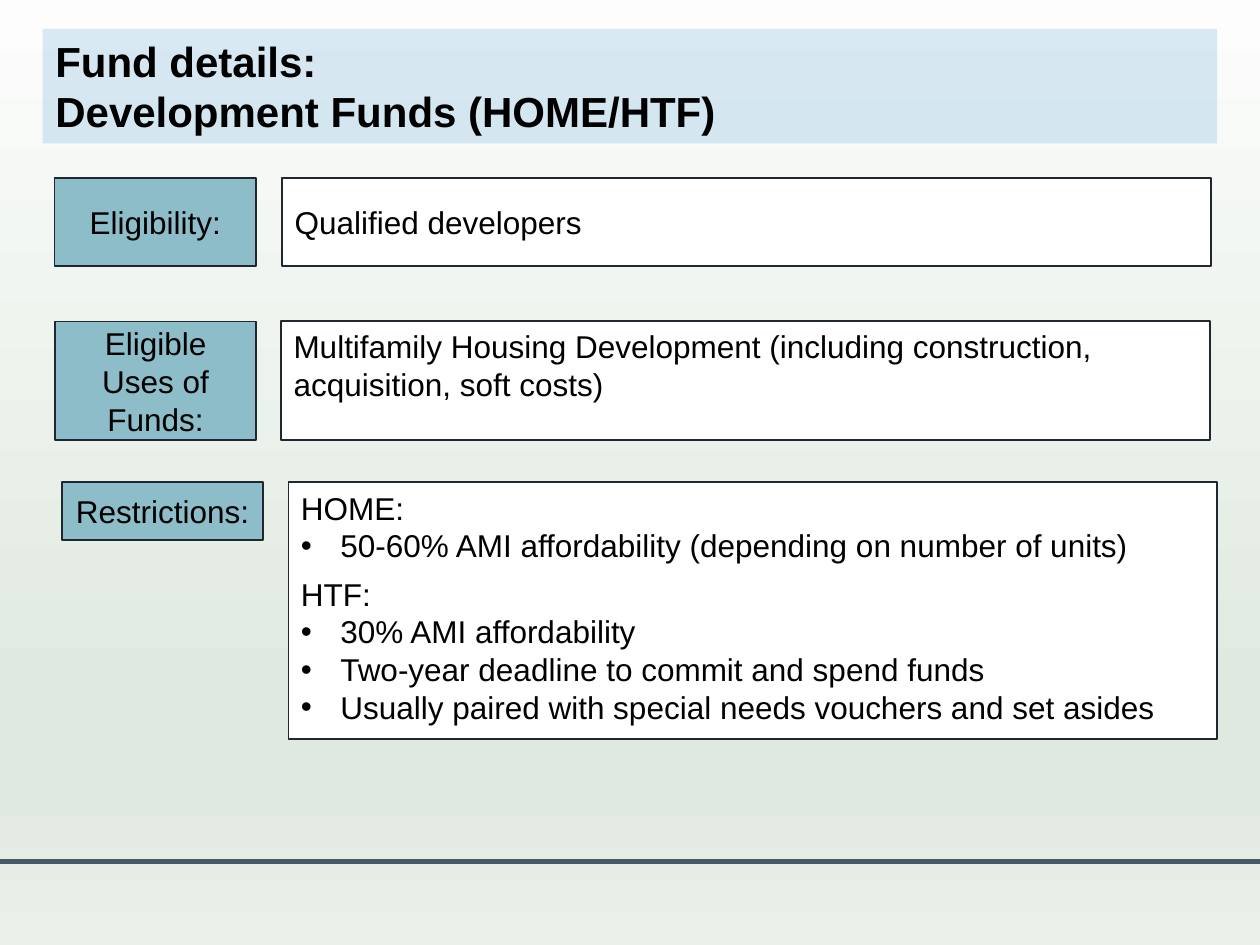
from dataclasses import dataclass

from lxml.etree import SubElement
from pptx import Presentation
from pptx.dml.color import RGBColor
from pptx.enum.shapes import MSO_CONNECTOR, MSO_SHAPE
from pptx.enum.text import MSO_ANCHOR, MSO_AUTO_SIZE, PP_ALIGN
from pptx.oxml.ns import qn
from pptx.slide import Slide
from pptx.text.text import TextFrame
from pptx.util import Pt


@dataclass(frozen=True)
class Theme:
    font: str = "Arial"
    title_size: float = 24
    body_size: float = 18
    text: str = "000000"
    title_fill: str = "0070C0"
    title_alpha: int = 14
    label_fill: str = "8CBDC8"
    detail_fill: str = "FFFFFF"
    border: str = "20272E"
    rule: str = "495869"
    backdrop: tuple = ((0, "FCFDFC"), (74, "E0E9E0"), (83, "E0E9E0"), (100, "EAF1EB"))


@dataclass(frozen=True)
class Para:
    text: str
    bullet: bool = False
    after: float = 0


@dataclass(frozen=True)
class Box:
    left: float
    top: float
    width: float
    height: float


@dataclass(frozen=True)
class FundRow:
    label: str
    label_box: Box
    details: tuple[Para, ...]
    detail_box: Box
    anchor: MSO_ANCHOR = MSO_ANCHOR.TOP


THEME = Theme()
LABEL_W, DETAIL_W = 115, 530.6

TITLE = (Para("Fund details:"), Para("Development Funds (HOME/HTF)"))
ROWS = (
    FundRow(
        "Eligibility:", Box(31.2, 101.6, LABEL_W, 50.4),
        (Para("Qualified developers"),), Box(161.3, 101.6, DETAIL_W, 50.4),
        MSO_ANCHOR.MIDDLE,
    ),
    FundRow(
        "Eligible Uses of Funds:", Box(31.4, 183.8, LABEL_W, 67.7),
        (Para("Multifamily Housing Development (including construction, "
              "acquisition, soft costs)"),),
        Box(160.7, 183.4, DETAIL_W, 68),
    ),
    FundRow(
        "Restrictions:", Box(35.4, 275.4, LABEL_W, 33.2),
        (
            Para("HOME:"),
            Para("50-60% AMI affordability (depending on number of units)", True, 6),
            Para("HTF:"),
            Para("30% AMI affordability", True),
            Para("Two-year deadline to commit and spend funds", True),
            Para("Usually paired with special needs vouchers and set asides", True),
        ),
        Box(164.9, 275.6, DETAIL_W, 146.8),
    ),
)


def rgb(color: str) -> RGBColor:
    return RGBColor.from_string(color)


def write(tf: TextFrame, paras: tuple[Para, ...], size: float, align: PP_ALIGN,
          anchor: MSO_ANCHOR, bold: bool = False) -> None:
    tf.word_wrap = True
    tf.auto_size = MSO_AUTO_SIZE.NONE
    tf.vertical_anchor = anchor
    for i, para in enumerate(paras):
        p = tf.paragraphs[0] if i == 0 else tf.add_paragraph()
        p.alignment = align
        p.space_before = Pt(0)
        p.space_after = Pt(para.after)
        if para.bullet:
            pPr = p._p.get_or_add_pPr()
            pPr.set("marL", str(Pt(22.5)))
            pPr.set("indent", str(-Pt(22.5)))
            SubElement(pPr, qn("a:buFont"), typeface=THEME.font)
            SubElement(pPr, qn("a:buChar"), char="•")
        r = p.add_run()
        r.text = para.text
        r.font.name = THEME.font
        r.font.size = Pt(size)
        r.font.bold = bold
        r.font.color.rgb = rgb(THEME.text)


def add_box(s: Slide, box: Box, fill: str, paras: tuple[Para, ...],
            align: PP_ALIGN, anchor: MSO_ANCHOR) -> None:
    sp = s.shapes.add_shape(MSO_SHAPE.RECTANGLE, Pt(box.left), Pt(box.top),
                            Pt(box.width), Pt(box.height))
    sp.shadow.inherit = False
    sp.fill.solid()
    sp.fill.fore_color.rgb = rgb(fill)
    sp.line.color.rgb = rgb(THEME.border)
    sp.line.width = Pt(1)
    write(sp.text_frame, paras, THEME.body_size, align, anchor)


def set_background(s: Slide) -> None:
    fill = s.background.fill
    fill.gradient()
    fill.gradient_angle = 270
    stops = s.background._cSld.find(".//" + qn("a:gsLst"))
    for gs in list(stops):
        stops.remove(gs)
    for pos, color in THEME.backdrop:
        gs = SubElement(stops, qn("a:gs"), pos=str(pos * 1000))
        SubElement(gs, qn("a:srgbClr"), val=color)


def add_rule(s: Slide, y: float, width: float) -> None:
    line = s.shapes.add_connector(MSO_CONNECTOR.STRAIGHT, Pt(0), Pt(y), Pt(width), Pt(y))
    line.line.color.rgb = rgb(THEME.rule)
    line.line.width = Pt(3)
    SubElement(line._element.spPr, qn("a:effectLst"))


def format_title(s: Slide) -> None:
    sp = s.shapes.title
    sp.left, sp.top, sp.width, sp.height = Pt(24.4), Pt(16.5), Pt(671.2), Pt(65.4)
    sp.fill.solid()
    sp.fill.fore_color.rgb = rgb(THEME.title_fill)
    color = sp._element.spPr.find(".//" + qn("a:srgbClr"))
    SubElement(color, qn("a:alpha"), val=str(THEME.title_alpha * 1000))
    write(sp.text_frame, TITLE, THEME.title_size, PP_ALIGN.LEFT, MSO_ANCHOR.TOP, True)


def main() -> None:
    prs = Presentation()
    prs.slide_width, prs.slide_height = Pt(720), Pt(540)
    s = prs.slides.add_slide(prs.slide_layouts.get_by_name("Title Only"))
    set_background(s)
    add_rule(s, 492.2, 720)
    format_title(s)
    for row in ROWS:
        add_box(s, row.label_box, THEME.label_fill, (Para(row.label),),
                PP_ALIGN.CENTER, MSO_ANCHOR.MIDDLE)
        add_box(s, row.detail_box, THEME.detail_fill, row.details,
                PP_ALIGN.LEFT, row.anchor)
    prs.save("out.pptx")


if __name__ == "__main__":
    main()
